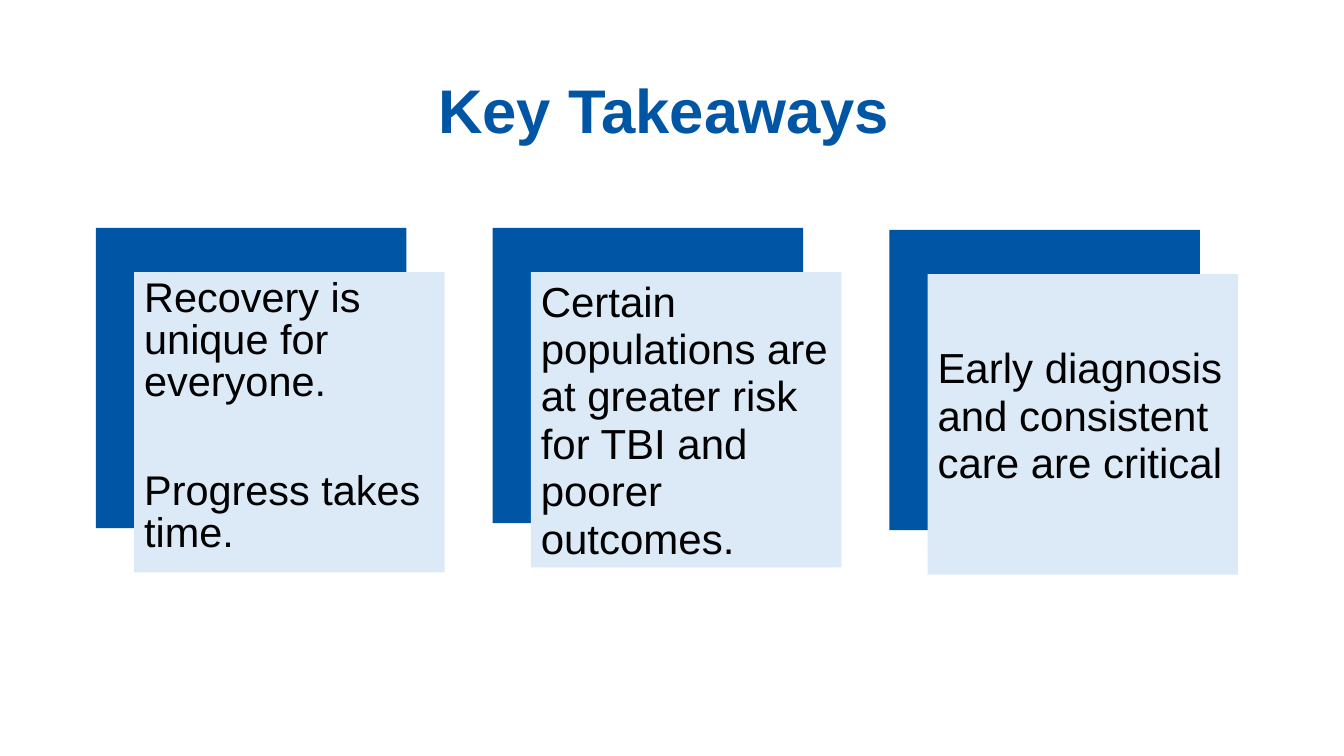
from dataclasses import dataclass

from pptx import Presentation
from pptx.dml.color import RGBColor
from pptx.enum.shapes import MSO_SHAPE
from pptx.enum.text import MSO_ANCHOR, MSO_AUTO_SIZE, PP_ALIGN
from pptx.oxml.ns import qn
from pptx.util import Inches, Pt

RECT = MSO_SHAPE.RECTANGLE
TOP, MIDDLE = MSO_ANCHOR.TOP, MSO_ANCHOR.MIDDLE
LEFT, CENTER = PP_ALIGN.LEFT, PP_ALIGN.CENTER
NO_FIT = MSO_AUTO_SIZE.NONE


@dataclass(frozen=True)
class Theme:
    font: str = "Arial"
    blue: RGBColor = RGBColor(0x00, 0x55, 0xA5)
    pale: RGBColor = RGBColor(0xDC, 0xEA, 0xF7)
    black: RGBColor = RGBColor(0, 0, 0)
    title_size: float = 44
    list_size: float = 29.6
    card_size: float = 30


theme = Theme()


def fill_box(sp, color):
    sp.fill.solid()
    sp.fill.fore_color.rgb = color
    sp.line.fill.background()


def format_paragraph(p, size, color, align, spacing, bold=False):
    p.alignment = align
    p.line_spacing = spacing
    p.space_before = Pt(0)
    for r in p.runs:
        r.font.name = theme.font
        r.font.size = Pt(size)
        r.font.bold = bold
        r.font.color.rgb = color


prs = Presentation()
prs.slide_width, prs.slide_height = Inches(13.33), Inches(7.5)
s = prs.slides.add_slide(prs.slide_layouts[1])

# Title
title = s.shapes.title
title.left, title.top = Inches(0.92), Inches(0.4)
title.width, title.height = Inches(11.5), Inches(1.45)
tf = title.text_frame
tf.text = "Key Takeaways "
tf.auto_size = NO_FIT
tf.vertical_anchor = MIDDLE
format_paragraph(tf.paragraphs[0], theme.title_size, theme.blue, CENTER, 0.9, bold=True)

# Takeaways: top, height, top inset, type size, line spacing, paragraphs
takeaways = [
    (2.26, 2.98, 0.07, theme.list_size, 0.84,
     ["Recovery is unique for everyone.", "Progress takes time."]),
    (2.26, 2.93, 0.07, theme.card_size, 0.94,
     ["Certain populations are at greater risk for TBI and poorer outcomes."]),
    (2.28, 2.98, 0.71, theme.card_size, 0.94,
     ["Early diagnosis and consistent care are critical"]),
]
FIRST_LEFT, PITCH, WIDTH = 0.95, 3.935, 3.08
SHIFT_X, SHIFT_Y = 0.38, 0.44

# Blue squares behind the cards
for i, (top, height, *_) in enumerate(takeaways):
    sp = s.shapes.add_shape(RECT, Inches(FIRST_LEFT + i * PITCH), Inches(top),
                            Inches(WIDTH), Inches(height))
    sp.shadow.inherit = False
    fill_box(sp, theme.blue)

# Pale cards; the first is the body placeholder, raised above the squares
body = s.placeholders[1]
body.element.getparent().append(body.element)
for i, (top, height, inset, size, spacing, lines) in enumerate(takeaways):
    if i == 0:
        card = body
    else:
        card = s.shapes.add_shape(RECT, 0, 0, 0, 0)
        card.shadow.inherit = False
    card.left = Inches(FIRST_LEFT + i * PITCH + SHIFT_X)
    card.top = Inches(top + SHIFT_Y)
    card.width, card.height = Inches(WIDTH), Inches(height)
    fill_box(card, theme.pale)
    tf = card.text_frame
    tf.text = "\n".join(lines)
    tf.word_wrap = True
    tf.auto_size = NO_FIT
    tf.vertical_anchor = TOP
    tf.margin_left = tf.margin_right = Inches(0.1)
    tf.margin_top, tf.margin_bottom = Inches(inset), Inches(0.05)
    for p in tf.paragraphs:
        format_paragraph(p, size, theme.black, LEFT, spacing)

for p in body.text_frame.paragraphs:
    pPr = p._p.get_or_add_pPr()
    pPr.set("marL", "0")
    pPr.set("indent", "0")
    pPr.append(pPr.makeelement(qn("a:buNone"), {}))
body.text_frame.paragraphs[1].space_before = Pt(48.5)

prs.save("out.pptx")
